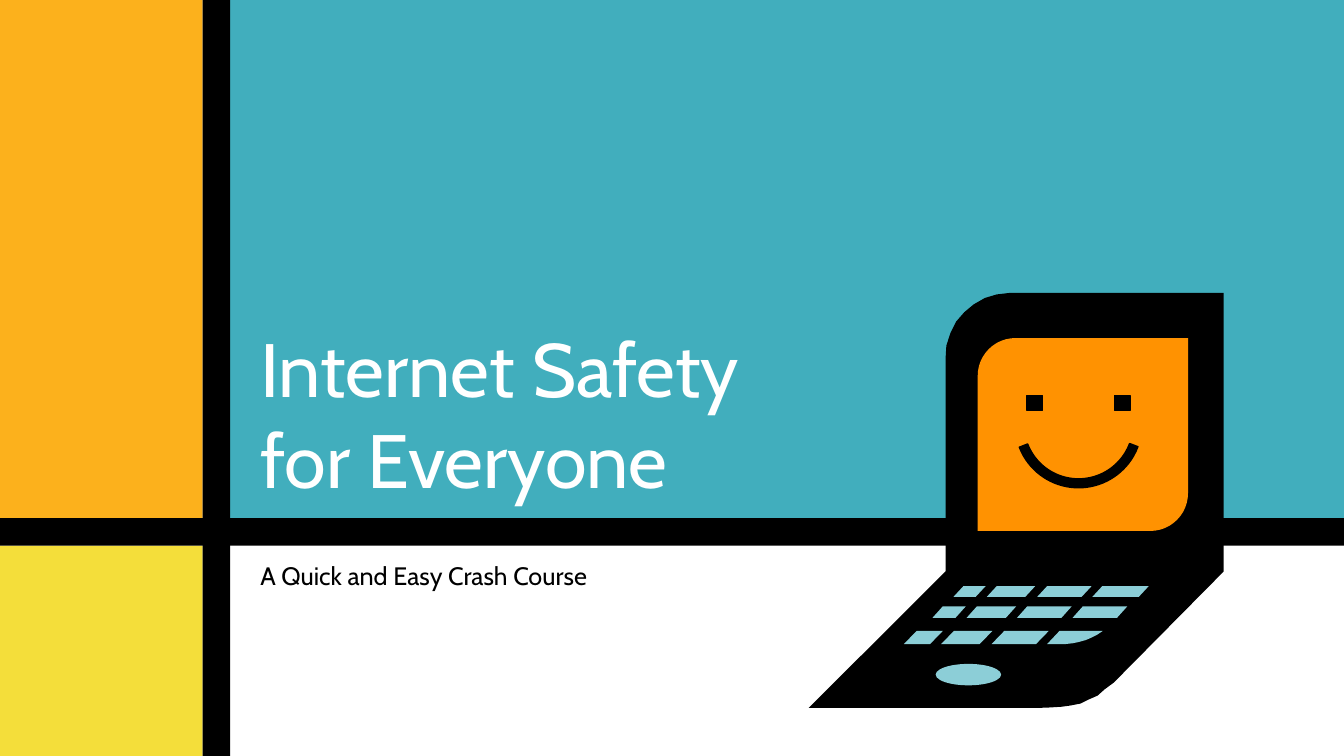
from pptx import Presentation
from pptx.dml.color import RGBColor
from pptx.enum.shapes import MSO_SHAPE as Preset
from pptx.enum.text import MSO_ANCHOR as Anchor
from pptx.util import Cm, Pt

BLACK = RGBColor(0x00, 0x00, 0x00)
WHITE = RGBColor(0xFF, 0xFF, 0xFF)
TEAL = RGBColor(0x41, 0xAE, 0xBD)
AMBER = RGBColor(0xFC, 0xB1, 0x1C)
YELLOW = RGBColor(0xF4, 0xDE, 0x3A)
ORANGE = RGBColor(0xFF, 0x92, 0x01)
KEY_BLUE = RGBColor(0x8C, 0xCE, 0xD7)

# Content; all lengths in centimetres
FONT = "Cabin"
TITLE = "Internet Safety\vfor Everyone"
SUBTITLE = "A Quick and Easy Crash Course"

WIDTH, HEIGHT = 33.87, 19.05
BAR = 0.69
BAR_X, BAR_Y = 5.11, 13.06
PANEL_X, PANEL_Y = BAR_X + BAR, BAR_Y + BAR

# Laptop outline, clockwise from the top right corner
LAPTOP = [
    (30.84, 7.38), (25.46, 7.38), (25.12, 7.42), (24.82, 7.51),
    (24.54, 7.67), (24.3, 7.87), (24.1, 8.1), (23.95, 8.4),
    (23.85, 8.71), (23.83, 9.04), (23.83, 14.4), (20.38, 17.84),
    (26.14, 17.84), (26.44, 17.83), (26.75, 17.81), (26.97, 17.78),
    (27.23, 17.73), (27.43, 17.63), (27.66, 17.53), (27.84, 17.37),
    (28.07, 17.2), (30.84, 14.4),
]
SCREEN = (24.64, 8.52, 5.3, 4.86)
SCREEN_RADIUS = 0.95

# Key rows: top, height, slant, then (left, bottom width) of each key
KEY_ROWS = [
    (14.77, 0.27, 0.25, [(24.03, 0.56), (24.87, 0.97), (26.14, 1.12), (27.53, 1.17)]),
    (15.28, 0.29, 0.26, [(23.5, 0.58), (24.36, 0.99), (25.63, 1.12), (27.03, 1.12)]),
    (15.9, 0.33, 0.32, [(22.78, 0.66), (23.72, 0.97), (24.99, 1.12)]),
]
CORNER_KEY = [
    (26.7, 15.9), (26.39, 16.23), (26.62, 16.23), (26.85, 16.23),
    (27.03, 16.21), (27.18, 16.18), (27.36, 16.13), (27.48, 16.08),
    (27.64, 16.0), (27.79, 15.9),
]
TOUCHPAD = (23.58, 16.73, 1.65, 0.54)

EYES_X, EYES_Y, EYE = (25.88, 28.09), 9.96, 0.39
SMILE = (25.58, 9.09, 3.2, 3.2)
SMILE_ARC = (120.41, 203.3, 0.07)

prs = Presentation()
prs.slide_width, prs.slide_height = Cm(WIDTH), Cm(HEIGHT)
slide = prs.slides.add_slide(prs.slide_layouts[6])


def paint(shape, color, outlined=False):
    shape.shadow.inherit = False
    shape.fill.solid()
    shape.fill.fore_color.rgb = color
    if outlined:
        shape.line.color.rgb = color
        shape.line.width = Pt(1)
    else:
        shape.line.fill.background()


def add_preset(preset, box, color, adjustments=(), outlined=False):
    shape = slide.shapes.add_shape(preset, *map(Cm, box))
    for index, value in enumerate(adjustments):
        shape.adjustments[index] = value
    paint(shape, color, outlined)
    return shape


def add_outline(points, color):
    start, *rest = [(Cm(x), Cm(y)) for x, y in points]
    builder = slide.shapes.build_freeform(*start)
    builder.add_line_segments(rest, close=True)
    paint(builder.convert_to_shape(), color)


def add_text(text, box, size, color, anchor):
    frame = slide.shapes.add_textbox(*map(Cm, box)).text_frame
    frame.word_wrap = True
    frame.vertical_anchor = anchor
    frame.margin_left = frame.margin_right = Cm(0.76)
    frame.margin_top = frame.margin_bottom = Cm(0.38)
    frame.text = text
    font = frame.paragraphs[0].font
    font.name, font.size, font.color.rgb = FONT, Pt(size), color


# Background blocks and crossing bars
for box, color in [
    ((PANEL_X, 0, WIDTH - PANEL_X, BAR_Y), TEAL),
    ((0, 0, BAR_X, BAR_Y), AMBER),
    ((0, PANEL_Y, BAR_X, HEIGHT - PANEL_Y), YELLOW),
    ((0, BAR_Y, WIDTH, BAR), BLACK),
    ((BAR_X, 0, BAR, HEIGHT), BLACK),
]:
    add_preset(Preset.RECTANGLE, box, color)

# Subtitle
add_text(SUBTITLE, (PANEL_X, PANEL_Y, WIDTH - PANEL_X, 1.55), 18, BLACK, Anchor.TOP)

# Laptop body and keyboard
add_outline(LAPTOP, BLACK)
for top, height, slant, keys in KEY_ROWS:
    for left, width in keys:
        add_preset(Preset.PARALLELOGRAM, (left, top, width + slant, height),
                   KEY_BLUE, [slant / height])
add_outline(CORNER_KEY, KEY_BLUE)
add_preset(Preset.OVAL, TOUCHPAD, KEY_BLUE)

# Screen and smiling face
add_preset(Preset.ROUND_2_DIAG_RECTANGLE, SCREEN, ORANGE, [SCREEN_RADIUS / SCREEN[3], 0])
for eye_x in EYES_X:
    add_preset(Preset.RECTANGLE, (eye_x, EYES_Y, EYE, EYE), BLACK, outlined=True)
smile = add_preset(Preset.BLOCK_ARC, SMILE, BLACK, SMILE_ARC, outlined=True)
smile.rotation = 180

# Title
add_text(TITLE, (PANEL_X, 7.67, 16.33, BAR_Y - 7.67), 54, WHITE, Anchor.BOTTOM)

prs.save("out.pptx")
